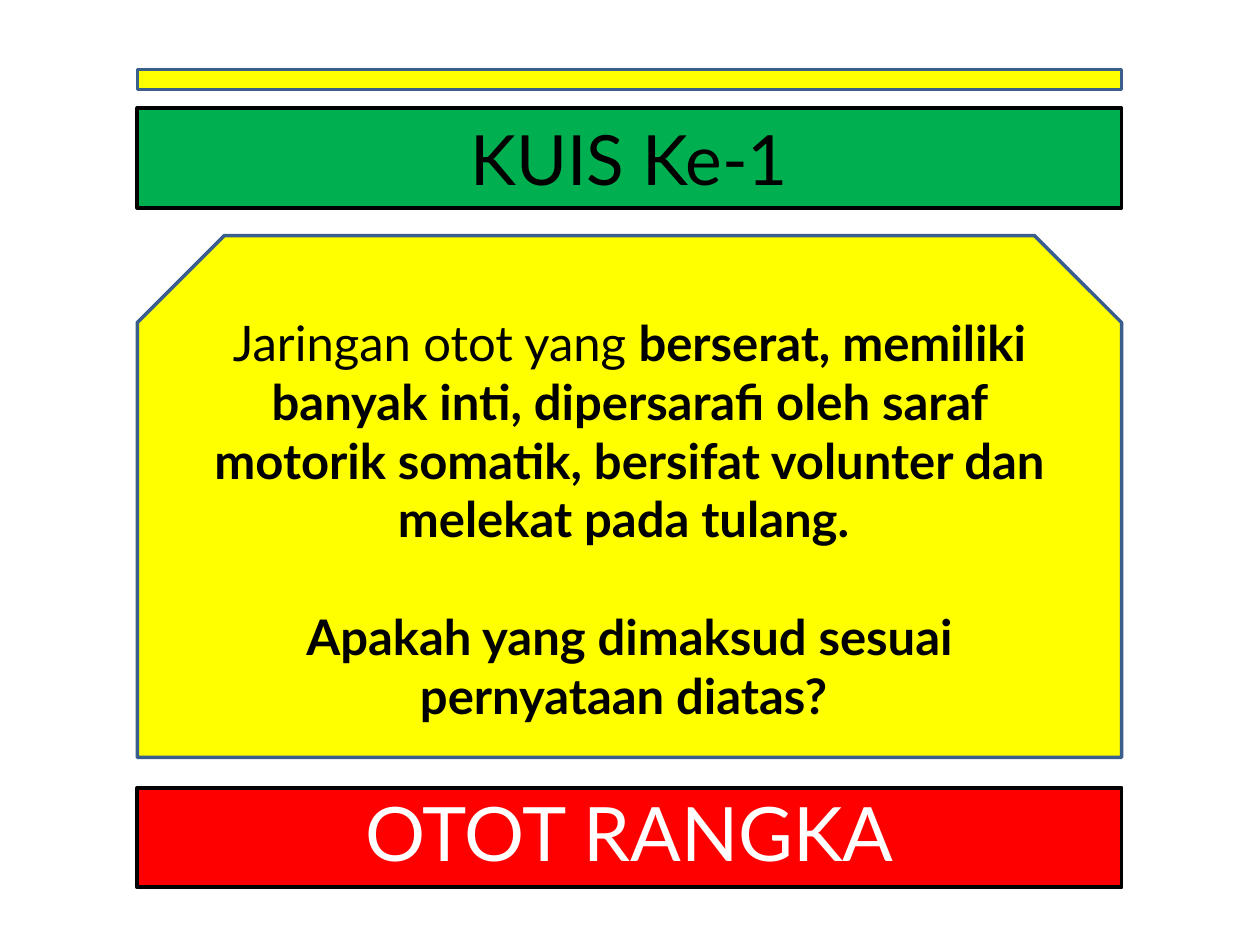
import pptx
import pptx.util
import pptx.dml.color
import pptx.enum.shapes
import pptx.enum.text

Cm = pptx.util.Cm
Pt = pptx.util.Pt
RGB = pptx.dml.color.RGBColor
KIND = pptx.enum.shapes.MSO_SHAPE

BLACK = RGB(0x00, 0x00, 0x00)
WHITE = RGB(0xFF, 0xFF, 0xFF)
GREEN = RGB(0x00, 0xB0, 0x50)
YELLOW = RGB(0xFF, 0xFF, 0x00)
RED = RGB(0xFF, 0x00, 0x00)
BLUE = RGB(0x3A, 0x5F, 0x8C)

FONT = "Lato"
LEFT, WIDTH = 2.77, 19.84

TITLE = [[("KUIS Ke-1", False)]]
QUIZ = [
    [
        ("Jaringan otot yang ", False),
        ("berserat, memiliki banyak inti, dipersarafi oleh saraf motorik "
         "somatik, bersifat volunter dan melekat pada tulang. ", True),
    ],
    [("Apakah yang dimaksud sesuai pernyataan diatas? ", True)],
]
ANSWER = [[("OTOT RANGKA", False)]]

BOXES = [
    dict(top=2.18, high=2.01, fill=GREEN, edge=BLACK, thick=2.25,
         text=TITLE, size=39.6, ink=BLACK),
    dict(top=4.75, high=10.52, fill=YELLOW, edge=BLUE, thick=2,
         kind=KIND.SNIP_2_SAME_RECTANGLE, text=QUIZ, size=28, ink=BLACK),
    dict(top=1.4, high=0.41, fill=YELLOW, edge=BLUE, thick=2),
    dict(top=15.88, high=2.01, fill=RED, edge=BLACK, thick=2.25,
         text=ANSWER, size=42.9, ink=WHITE, space=0.9),
]


def write(frame, text, size, ink, space=1):
    frame.word_wrap = True
    frame.vertical_anchor = pptx.enum.text.MSO_ANCHOR.MIDDLE
    for i, parts in enumerate(text):
        para = frame.add_paragraph() if i else frame.paragraphs[0]
        para.alignment = pptx.enum.text.PP_ALIGN.CENTER
        para.line_spacing = space
        if i:
            para.space_before = Pt(size * 1.2)
        for words, bold in parts:
            run = para.add_run()
            run.text = words
            run.font.name = FONT
            run.font.size = Pt(size)
            run.font.bold = bold
            run.font.color.rgb = ink


def draw(slide, top, high, fill, edge, thick, kind=KIND.RECTANGLE,
         text=None, **style):
    box = slide.shapes.add_shape(kind, Cm(LEFT), Cm(top), Cm(WIDTH), Cm(high))
    box.shadow.inherit = False
    box.fill.solid()
    box.fill.fore_color.rgb = fill
    box.line.color.rgb = edge
    box.line.width = Pt(thick)
    if text:
        write(box.text_frame, text, **style)


def main():
    deck = pptx.Presentation()
    deck.slide_width = Cm(25.4)
    deck.slide_height = Cm(19.05)
    slide = deck.slides.add_slide(deck.slide_layouts[6])
    for box in BOXES:
        draw(slide, **box)
    deck.save("out.pptx")


if __name__ == "__main__":
    main()
